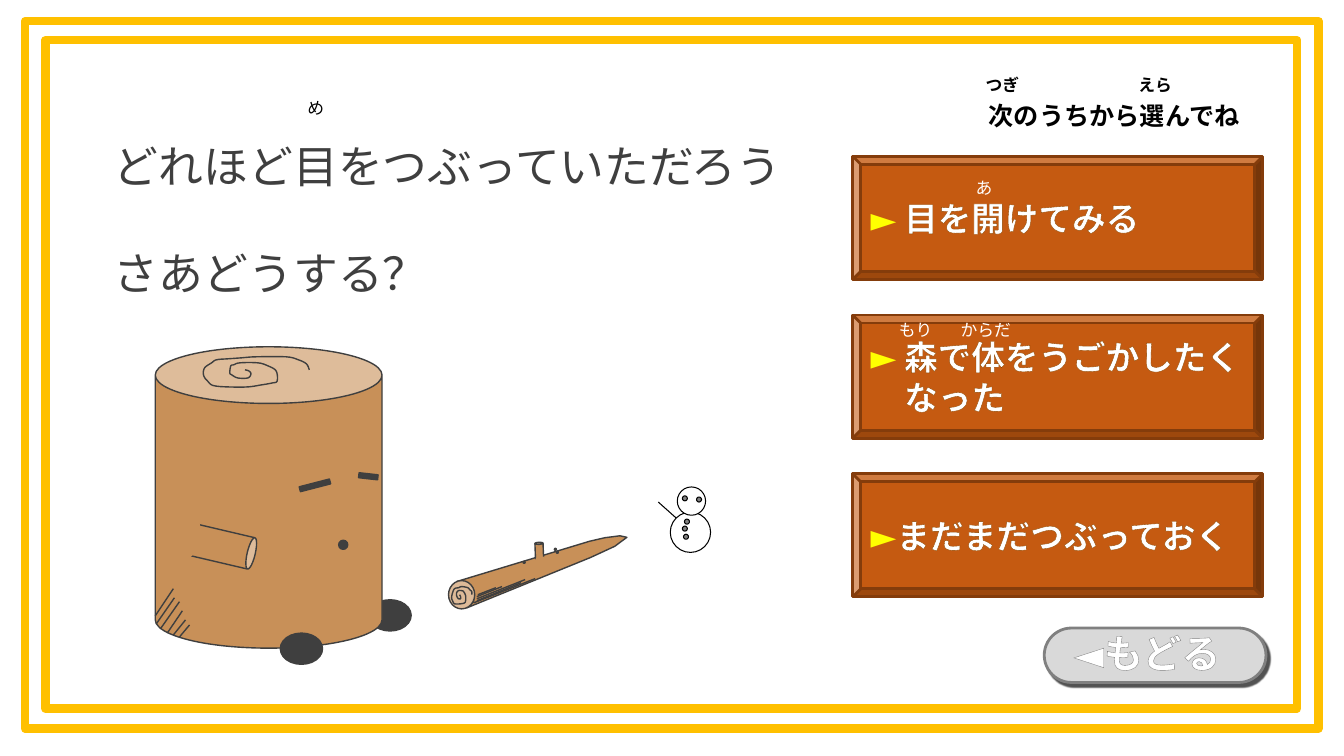
from lxml import etree
from pptx import Presentation
from pptx.dml.color import RGBColor
from pptx.enum.shapes import MSO_CONNECTOR, MSO_SHAPE
from pptx.enum.text import MSO_ANCHOR, MSO_AUTO_SIZE, PP_ALIGN
from pptx.oxml.ns import qn
from pptx.util import Pt

RECT, OVAL, CAN = MSO_SHAPE.RECTANGLE, MSO_SHAPE.OVAL, MSO_SHAPE.CAN
BEVEL, PILL = MSO_SHAPE.BEVEL, MSO_SHAPE.ROUNDED_RECTANGLE
LINE = MSO_CONNECTOR.STRAIGHT
TOP, MID = MSO_ANCHOR.TOP, MSO_ANCHOR.MIDDLE
LEFT, MIDST = PP_ALIGN.LEFT, PP_ALIGN.CENTER
GROW, FIXED = MSO_AUTO_SIZE.SHAPE_TO_FIT_TEXT, MSO_AUTO_SIZE.NONE
LATIN, CJK = "Arial", "Noto Sans CJK JP"
WOOD, PALE, DARK, GREY = "C89058", "DDBA98", "3F3F3F", "808080"
WHITE, BLACK, GOLD, EDGE = "FFFFFF", "000000", "FFC000", "8E4700"

STORY = ["どれほど目をつぶっていただろう", "さあどうする？"]
CHOICES = [
    [" 目を開けてみる"],
    [" 森で体をうごかしたく", "なった"],
    ["まだまだつぶっておく"],
]
LABELS = [
    ("次のうちから選んでね", 699.1, 68, 201, 29, 18, BLACK, True),
    ("つぎ", 697, 50, 39, 21.8, 12, BLACK, True),
    ("えら", 806, 50, 47, 21.8, 12, BLACK, True),
    ("め", 212.4, 66.2, 59, 21.8, 12, BLACK, False),
    ("あ", 689.8, 123.1, 59, 21.8, 12, WHITE, False),
    ("もり", 635, 224.6, 59, 21.8, 12, WHITE, False),
    ("からだ", 679, 224.6, 59, 21.8, 12, WHITE, False),
]
FRAMES = [(18, 15.1, 923.8, 505.4), (32.4, 28.8, 894.2, 477.4)]

TWIG = [(333.4, 434.2), (338.4, 429.8), (338.4, 421.9), (333.4, 416.2),
        (326.2, 415.4), (421.2, 386.6), (432, 384.1), (442.8, 382.7),
        (447.8, 383.8), (439.2, 390.2), (421.9, 398.2)]
TWIG_RING = [
    (328.3, 424.8), (329, 426.2), (329, 427.7), (327.6, 427.7), (326.9, 427),
    (326.2, 425.5), (326.2, 423.4), (327.6, 421.9), (329.8, 421.9),
    (331.2, 422.6), (332.6, 425.5), (332.6, 429.1), (331.9, 430.6),
    (329, 431.3), (324.7, 431.3), (323.3, 429.1), (322.6, 427),
    (323.3, 423.4), (324.7, 420.5), (327.6, 419.8), (329.8, 419),
    (334.1, 419.8), (335.5, 421.2), (337, 422.6), (337, 424.8)]
LOG_RING = [
    (175, 264.2), (177.8, 265), (179.3, 267.1), (177.1, 270), (169.9, 270),
    (165.6, 267.8), (164.2, 266.4), (164.9, 261.4), (167, 260.6),
    (171.4, 259.2), (184.3, 259.2), (191.5, 261.4), (197.3, 265),
    (198, 272.2), (194.4, 273.6), (186.5, 275), (175, 276.5),
    (154.1, 275.8), (148.3, 272.2), (145.4, 267.8), (146.2, 262.8),
    (151.2, 259.2), (154.8, 257), (163.4, 256.3), (172.8, 255.6),
    (182.9, 254.9), (204.5, 254.9), (213.1, 257), (218.9, 259.9),
    (221, 264.2)]
TWIG_PARTS = [
    (CAN, 382.3, 387.4, 5.8, 12.2, 358, WOOD, DARK),
    (OVAL, 382.3, 397.4, 7.9, 5, 355.4, WOOD, None),
    (OVAL, 373.7, 401, 1.4, 1.4, 0, DARK, DARK),
    (OVAL, 396, 391.7, 1.4, 1.4, 0, DARK, DARK),
    (OVAL, 397.4, 393.8, 1.4, 1.4, 0, DARK, DARK),
]
TWIG_SHADE = [
    (382.3, 413.3, 338.4, 430.6), (375.1, 414, 340.6, 427.7),
    (372.2, 416.2, 340.6, 429.1), (358.6, 419, 340.6, 426.2),
    (354.2, 419.8, 341.3, 424.8)]
LOG_PARTS = [
    (OVAL, 263.5, 428.4, 30.2, 22.3, 0, DARK, DARK),
    (CAN, 110.9, 247.7, 162, 215.3, 0, WOOD, DARK),
    (OVAL, 241.9, 385.9, 6.5, 6.5, 0, DARK, DARK),
    (OVAL, 200.2, 452.2, 30.2, 22.3, 0, DARK, DARK),
    (RECT, 213.8, 344.9, 22.3, 3.6, 345.5, DARK, DARK),
    (RECT, 256.3, 338.4, 13.7, 3.6, 6.3, DARK, DARK),
    (CAN, 146.2, 365, 23, 50.4, 103.2, WOOD, DARK),
    (OVAL, 110.2, 368.6, 40.3, 25.2, 96.5, WOOD, None),
]
LOG_SHADE = [
    (123.8, 420.5, 110.9, 439.9), (124.6, 427, 111.6, 445.7),
    (128.2, 429.8, 114.5, 449.3), (130.3, 436.3, 119.5, 452.2),
    (132.5, 442.8, 123.8, 453.6), (135.4, 446.4, 128.2, 455)]
SNOW = [(478.8, 365.8, 28.8), (483.8, 347.8, 20.2)]
DOTS = [(488.9, 370.8), (488.2, 381.6), (487.4, 375.8),
        (487.4, 354.2), (497.5, 355)]


def tint(hue):
    return RGBColor.from_string(hue)


def ink(line, hue, wide):
    line.color.rgb = tint(hue)
    line.width = Pt(wide)


def paint(shape, fill, edge, wide=1):
    shape.shadow.inherit = False
    if fill:
        shape.fill.solid()
        shape.fill.fore_color.rgb = tint(fill)
    else:
        shape.fill.background()
    if edge:
        ink(shape.line, edge, wide)
    else:
        shape.line.fill.background()


def put(host, kind, x, y, w, h, turn=0, fill=None, edge=None, wide=1):
    shape = host.add_shape(kind, Pt(x), Pt(y), Pt(w), Pt(h))
    shape.rotation = turn
    paint(shape, fill, edge, wide)
    return shape


def rule(host, ends, hue, wide):
    wire = host.add_connector(LINE, *[Pt(v) for v in ends])
    ink(wire.line, hue, wide)
    etree.SubElement(wire._element.spPr, qn("a:effectLst"))


def trace(host, dots, fill, edge, close):
    spots = [(Pt(x), Pt(y)) for x, y in dots]
    pen = host.build_freeform(*spots[0], scale=1.0)
    pen.add_line_segments(spots[1:], close=close)
    paint(pen.convert_to_shape(), fill, edge)


def smooth(dots, steps=5):
    ends = [dots[0]] + dots + [dots[-1]]
    out = [dots[0]]
    for a, b, c, d in zip(ends, ends[1:], ends[2:], ends[3:]):
        for i in range(1, steps + 1):
            t = i / steps
            out.append(tuple(
                q + t * (r - p + t * (2 * p - 5 * q + 4 * r - s
                                      + t * (3 * (q - r) + s - p))) / 2
                for p, q, r, s in zip(a, b, c, d)))
    return out


def write(para, words, size, hue, face=LATIN, bold=False, rim=None, wide=1):
    run = para.add_run()
    run.text = words
    font = run.font
    font.size, font.name, font.bold = Pt(size), face, bold
    font.color.rgb = tint(hue)
    props = run._r.get_or_add_rPr()
    east = etree.Element(qn("a:ea"), typeface=CJK)
    props.find(qn("a:latin")).addnext(east)
    if rim:
        ln = etree.Element(qn("a:ln"), w=str(Pt(wide)))
        solid = etree.SubElement(ln, qn("a:solidFill"))
        etree.SubElement(solid, qn("a:srgbClr"), val=rim)
        props.insert(0, ln)


def lay(frame, anchor, fit):
    frame.word_wrap = True
    frame.auto_size = fit
    frame.vertical_anchor = anchor


def box(host, x, y, w, h):
    frame = host.add_textbox(Pt(x), Pt(y), Pt(w), Pt(h)).text_frame
    lay(frame, TOP, GROW)
    return frame.paragraphs[0]


def lines(frame, count):
    return [frame.paragraphs[0]] + [frame.add_paragraph() for _ in range(count - 1)]


deck = Presentation()
deck.slide_width, deck.slide_height = Pt(960), Pt(540)
slide = deck.slides.add_slide(deck.slide_layouts[5])
art = slide.shapes

for spot in FRAMES:
    put(art, RECT, *spot, edge=GOLD, wide=6)

title = art.title
title.left, title.top, title.width, title.height = Pt(74.2), Pt(56.9), Pt(604.8), Pt(123.8)
lay(title.text_frame, TOP, FIXED)
for para, words in zip(lines(title.text_frame, len(STORY)), STORY):
    para.alignment, para.line_spacing = LEFT, 2.0
    write(para, words, 32, DARK)

trace(art, TWIG, WOOD, DARK, True)
put(art, OVAL, 320.4, 414.7, 18.7, 20.2, 0, PALE, DARK)
trace(art, smooth(TWIG_RING), None, DARK, False)
for part in TWIG_PARTS + LOG_PARTS:
    put(art, *part)
trace(art, smooth(LOG_RING), None, DARK, False)
for ends in TWIG_SHADE + LOG_SHADE:
    rule(art, ends, DARK, 1)

snow = art.add_group_shape().shapes
for x, y, d in SNOW:
    put(snow, OVAL, x, y, d, d, 0, WHITE, BLACK, 0.75)
for x, y in DOTS:
    put(snow, OVAL, x, y, 3.6, 3.6, 0, GREY, BLACK, 0.75)
rule(snow, (483.1, 370.1, 470.2, 358.6), BLACK, 0.75)

pill = put(art, PILL, 745.9, 448.6, 158.4, 38.9, 0, "D9D9D9", GREY, 2)
pill.adjustments[0] = 0.5
glow = etree.SubElement(pill._element.spPr.find(qn("a:effectLst")), qn("a:outerShdw"),
                        blurRad=str(Pt(1)), dist=str(Pt(3)), dir="3000000",
                        algn="tl", rotWithShape="0")
shade = etree.SubElement(glow, qn("a:srgbClr"), val=BLACK)
etree.SubElement(shade, qn("a:alpha"), val="68000")
back = box(art, 740.2, 445.7, 158.4, 41)
back.alignment = MIDST
write(back, "◄", 28, WHITE, CJK, True, GREY, 1)
write(back, "もどる", 28, WHITE, CJK, True, GREY, 1.5)

for i, choice in enumerate(CHOICES):
    card = put(art, BEVEL, 609.1, 111.6 + 113.4 * i, 293, 88, 0, "C55A11", "843C0B", 2)
    card.adjustments[0] = 0.065
    lay(card.text_frame, MID, FIXED)
    for j, para in enumerate(lines(card.text_frame, len(choice))):
        para.alignment = LEFT
        if j:
            para._p.get_or_add_pPr().set("marL", str(Pt(24)))
        else:
            write(para, "►", 24, "FFFF00", CJK, True, EDGE)
        write(para, choice[j], 24, WHITE, CJK, True, EDGE)

for words, x, y, w, h, size, hue, bold in LABELS:
    write(box(art, x, y, w, h), words, size, hue, bold=bold)

deck.save("out.pptx")
